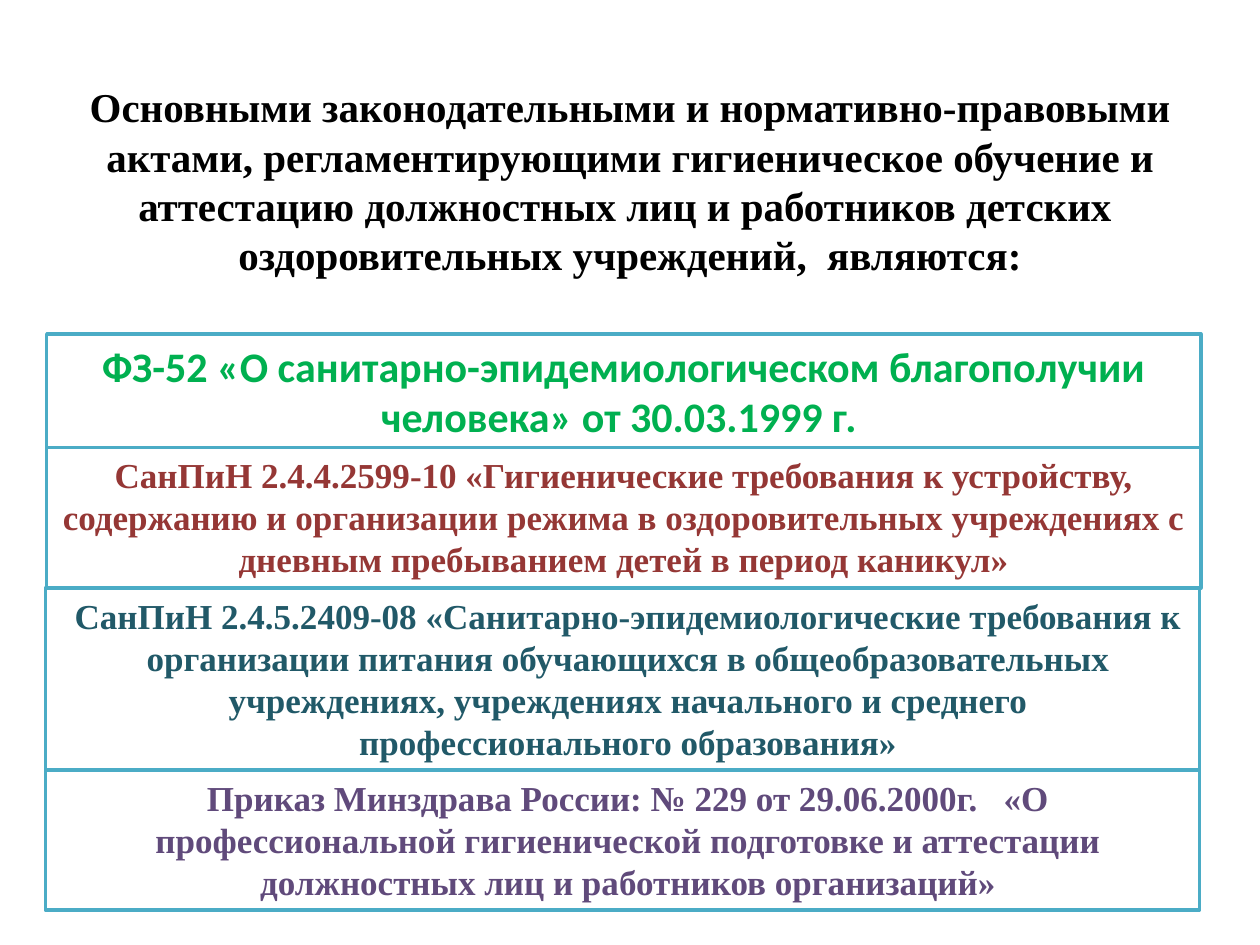
from dataclasses import dataclass

from pptx import Presentation
from pptx.dml.color import RGBColor as Rgb
from pptx.enum.shapes import MSO_SHAPE as Shape
from pptx.enum.text import MSO_ANCHOR as Anchor, MSO_AUTO_SIZE as AutoSize, PP_ALIGN as Align
from pptx.util import Pt


@dataclass(frozen=True)
class Theme:
    serif: str = "Times New Roman"
    sans: str = "Calibri"
    title_size: float = 23.4
    law_size: float = 24
    rule_size: float = 20
    black: str = "000000"
    white: str = "FFFFFF"
    border: str = "4BACC6"
    green: str = "00B050"
    red: str = "953735"
    teal: str = "215968"
    purple: str = "604A7B"


@dataclass(frozen=True)
class Act:
    text: str
    height: float
    color: str
    font: str = Theme.serif
    size: float = Theme.rule_size
    shift: float = 0
    indent: float = 0
    space_before: float = 0


THEME = Theme()
TITLE = (
    "Основными законодательными и нормативно-правовыми актами, "
    "регламентирующими гигиеническое обучение и аттестацию должностных лиц "
    "и работников детских  оздоровительных учреждений,  являются:"
)
ACTS = [
    Act("ФЗ-52 «О санитарно-эпидемиологическом благополучии человека» от 30.03.1999 г. ",
        65, THEME.green, THEME.sans, THEME.law_size),
    Act("СанПиН 2.4.4.2599-10 «Гигиенические требования к устройству, содержанию и "
        "организации режима в оздоровительных учреждениях с дневным пребыванием детей "
        "в период каникул»", 80.3, THEME.red),
    Act("СанПиН 2.4.5.2409-08 «Санитарно-эпидемиологические требования к организации "
        "питания обучающихся в общеобразовательных учреждениях, учреждениях начального "
        "и среднего профессионального образования»",
        104, THEME.teal, shift=-0.8, indent=6.5, space_before=6),
    Act("Приказ Минздрава России: № 229 от 29.06.2000г.   «О профессиональной "
        "гигиенической подготовке и аттестации должностных лиц и работников организаций»",
        80, THEME.purple, shift=-0.8, indent=6.5, space_before=6),
]


def write(shape, text, font, size, color):
    """Fill the shape with one bold centred paragraph and return it."""
    frame = shape.text_frame
    frame.word_wrap = True
    frame.vertical_anchor = Anchor.TOP
    para = frame.paragraphs[0]
    para.text = text
    para.alignment = Align.CENTER
    para.font.name = font
    para.font.size = Pt(size)
    para.font.bold = True
    para.font.color.rgb = Rgb.from_string(color)
    return para


def place_title(page, left, top, width, height):
    title = page.shapes.title
    title.left, title.top, title.width, title.height = map(Pt, (left, top, width, height))
    write(title, TITLE, THEME.serif, THEME.title_size, THEME.black)
    title.text_frame.auto_size = AutoSize.NONE


def place_acts(page, left, top, width):
    """Stack the framed acts downwards without gaps."""
    for act in ACTS:
        box = page.shapes.add_shape(
            Shape.RECTANGLE, Pt(left + act.shift), Pt(top), Pt(width), Pt(act.height))
        box.shadow.inherit = False
        box.fill.solid()
        box.fill.fore_color.rgb = Rgb.from_string(THEME.white)
        box.line.color.rgb = Rgb.from_string(THEME.border)
        box.line.width = Pt(2)
        para = write(box, act.text, act.font, act.size, act.color)
        para.space_before = Pt(act.space_before)
        para._p.get_or_add_pPr().set("marL", str(Pt(act.indent)))
        box.text_frame.auto_size = AutoSize.SHAPE_TO_FIT_TEXT
        top += act.height


def main():
    deck = Presentation()
    deck.slide_width, deck.slide_height = Pt(720), Pt(540)
    page = deck.slides.add_slide(deck.slide_layouts[5])
    place_title(page, 36, 43.2, 648, 136)
    place_acts(page, 26.7, 190.8, 659.5)
    deck.save("out.pptx")


if __name__ == "__main__":
    main()
